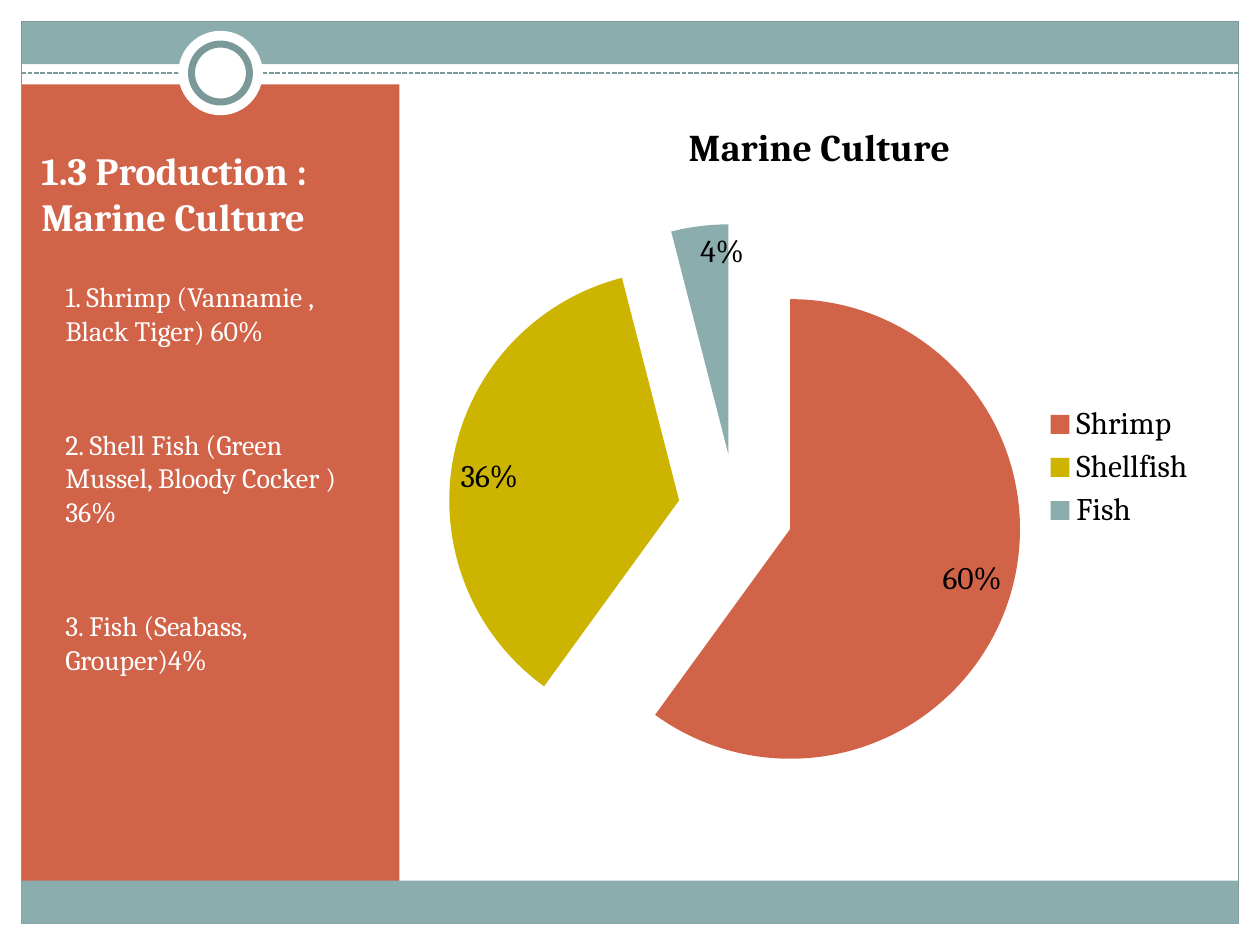
from dataclasses import dataclass

from lxml import etree
from pptx import Presentation
from pptx.chart.data import CategoryChartData
from pptx.dml.color import RGBColor
from pptx.enum import chart as ch, dml, shapes, text
from pptx.oxml import ns
from pptx.util import Inches, Pt


@dataclass(frozen=True)
class Theme:
    font: str = "Cambria"
    teal: RGBColor = RGBColor(0x8C, 0xAD, 0xAE)
    edge: RGBColor = RGBColor(0x7C, 0x99, 0x9A)
    rust: RGBColor = RGBColor(0xD1, 0x63, 0x49)
    olive: RGBColor = RGBColor(0xCC, 0xB4, 0x00)
    white: RGBColor = RGBColor(0xFF, 0xFF, 0xFF)
    black: RGBColor = RGBColor(0, 0, 0)
    heading: Pt = Pt(22)
    body: Pt = Pt(16)
    chart_title: Pt = Pt(21.6)
    chart_text: Pt = Pt(18)


THEME = Theme()


def set_font(font, size, color, bold=False):
    font.name, font.size, font.bold = THEME.font, size, bold
    font.color.rgb = color


def add_block(slide, kind, box, fill=None, line=None, weight=0.75):
    block = slide.shapes.add_shape(kind, *(Inches(v) for v in box))
    block.shadow.inherit = False
    if fill is None:
        block.fill.background()
    else:
        block.fill.solid()
        block.fill.fore_color.rgb = fill
    if line is None:
        block.line.fill.background()
    else:
        block.line.color.rgb = line
        block.line.width = Pt(weight)


def add_frame(slide, box):
    """Bands, side panel, border, dashed rule and ring."""
    left, top, width, height = box
    rect, oval = shapes.MSO_SHAPE.RECTANGLE, shapes.MSO_SHAPE.OVAL
    band = 0.34
    add_block(slide, rect, (left, top, width, band), THEME.teal)
    add_block(slide, rect, (left, top + 0.5, 3, 6.42), THEME.rust)
    add_block(slide, rect, box, line=THEME.edge)

    # Dashed rule, with the ring centred on it
    rule_y = top + 0.41
    rule = slide.shapes.add_connector(
        shapes.MSO_CONNECTOR.STRAIGHT,
        Inches(left), Inches(rule_y), Inches(left + width), Inches(rule_y))
    rule.line.color.rgb = THEME.edge
    rule.line.width = Pt(0.9)
    rule.line.dash_style = dml.MSO_LINE.SQUARE_DOT
    etree.SubElement(rule._element.spPr, ns.qn("a:effectLst"))
    ring_x = left + 1.58
    for size, line in ((0.67, None), (0.46, THEME.edge)):
        ring = (ring_x - size / 2, rule_y - size / 2, size, size)
        add_block(slide, oval, ring, THEME.white, line, 4)

    add_block(slide, rect, (left, top + height - band, width, band), THEME.teal)


def add_text(slide, box, lines, size, bold=False, gap=0,
             anchor=text.MSO_ANCHOR.TOP):
    frame = slide.shapes.add_textbox(*(Inches(v) for v in box)).text_frame
    frame.word_wrap = True
    frame.vertical_anchor = anchor
    frame.text = "\n".join(lines)
    for paragraph in frame.paragraphs:
        set_font(paragraph.font, size, THEME.white, bold)
        paragraph.space_after = Pt(gap)


def add_side_panel(slide, box):
    """Heading above the list of species."""
    left, top, width, height = box
    add_text(slide, (left, top, width, 0.95),
             ["1.3 Production : Marine Culture"], THEME.heading, bold=True,
             anchor=text.MSO_ANCHOR.BOTTOM)
    species = [
        "1. Shrimp (Vannamie , Black Tiger) 60%",
        "2. Shell Fish (Green Mussel, Bloody Cocker ) 36%",
        "3. Fish (Seabass, Grouper)4%",
    ]
    add_text(slide, (left + 0.19, top + 1.17, width - 0.19, height - 1.17),
             species, THEME.body, gap=46)


def add_share_chart(slide, box):
    """Exploded pie of production shares."""
    shares = CategoryChartData(number_format='0"%"')
    shares.categories = ["Shrimp", "Shellfish", "Fish"]
    shares.add_series("Marine Culture", (60, 36, 4))
    pie = slide.shapes.add_chart(
        ch.XL_CHART_TYPE.PIE, *(Inches(v) for v in box), shares).chart
    set_font(pie.font, THEME.chart_text, THEME.black)

    pie.has_title = True
    title = pie.chart_title.text_frame
    title.text = "Marine Culture"
    set_font(title.paragraphs[0].font, THEME.chart_title, THEME.black, True)
    pie.has_legend = True
    pie.legend.position = ch.XL_LEGEND_POSITION.RIGHT
    pie.legend.include_in_layout = False

    plot = pie.plots[0]
    plot.vary_by_categories = True
    series = plot.series[0]
    for index, color in enumerate((THEME.rust, THEME.olive, THEME.teal)):
        fill = series.points[index].format.fill
        fill.solid()
        fill.fore_color.rgb = color

    # Pull the slices apart
    explosion = etree.Element(ns.qn("c:explosion"), val="25")
    series._element.find(ns.qn("c:dPt")).addprevious(explosion)

    plot.has_data_labels = True
    labels = plot.data_labels
    labels.show_value = True
    labels.number_format = '0"%"'
    labels.number_format_is_linked = False
    labels.position = ch.XL_LABEL_POSITION.INSIDE_END
    set_font(labels.font, THEME.chart_text, THEME.black)


def main():
    deck = Presentation()
    deck.slide_width, deck.slide_height = Inches(10), Inches(7.5)
    slide = deck.slides.add_slide(deck.slide_layouts[6])
    add_frame(slide, (0.17, 0.17, 9.66, 7.16))
    add_side_panel(slide, (0.23, 1, 2.77, 5.7))
    add_share_chart(slide, (3.42, 0.75, 6.17, 5.92))
    deck.save("out.pptx")


if __name__ == "__main__":
    main()
